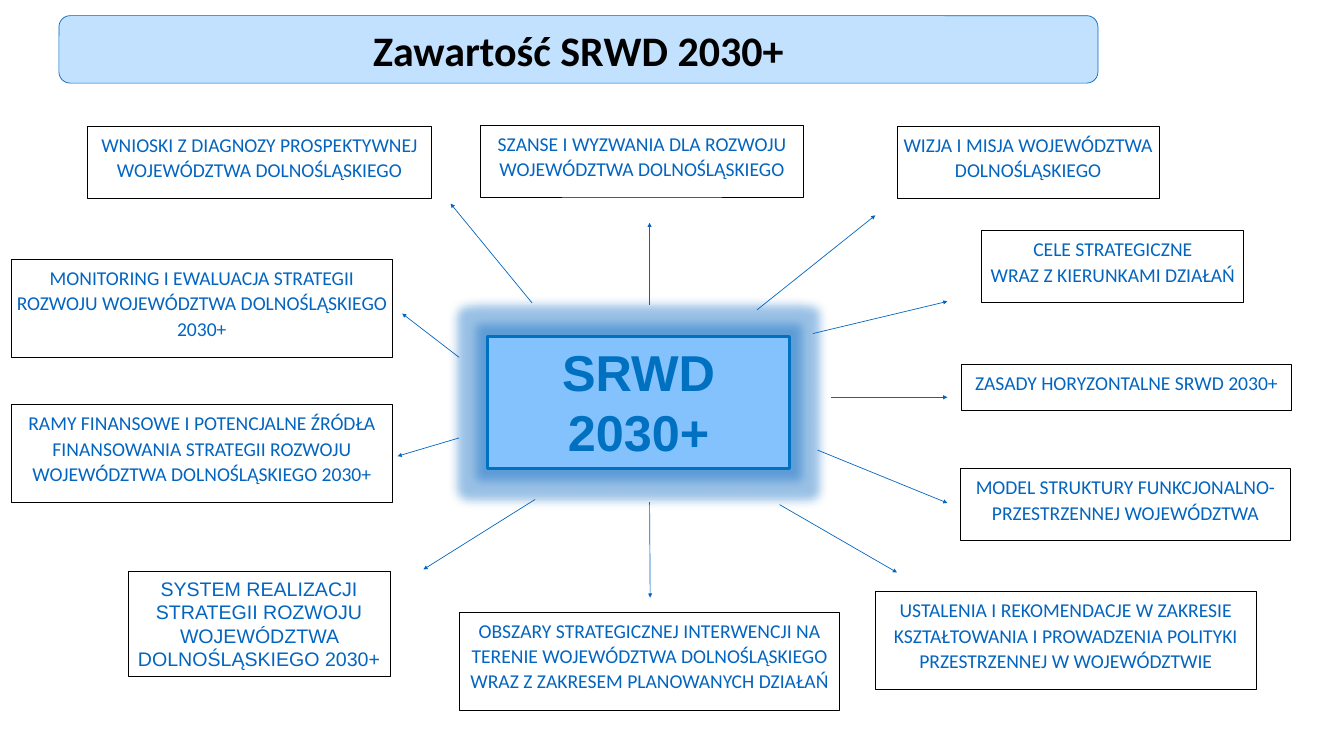
from dataclasses import dataclass

from lxml import etree
from pptx import Presentation
from pptx.dml.color import RGBColor
from pptx.enum.shapes import MSO_CONNECTOR, MSO_SHAPE
from pptx.enum.text import MSO_ANCHOR, MSO_AUTO_SIZE, PP_ALIGN
from pptx.oxml.ns import qn
from pptx.util import Cm, Pt

RECTANGLE = MSO_SHAPE.RECTANGLE
ROUNDED = MSO_SHAPE.ROUNDED_RECTANGLE
STRAIGHT = MSO_CONNECTOR.STRAIGHT
TOP, MIDDLE = MSO_ANCHOR.TOP, MSO_ANCHOR.MIDDLE
CENTER = PP_ALIGN.CENTER
GROW = MSO_AUTO_SIZE.SHAPE_TO_FIT_TEXT


@dataclass(frozen=True)
class Theme:
    blue: str = "0365C0"
    hub_blue: str = "0070C0"
    hub_fill: str = "83C2FD"
    title_fill: str = "C1E1FE"
    black: str = "000000"
    body_font: str = "Calibri"
    hub_font: str = "Arial"
    title_size: int = 60
    hub_size: int = 72
    topic_size: int = 28
    thin: float = 1
    thick: float = 4.5
    inset: float = 0.25


class SlideBuilder:
    def __init__(self, slide, theme):
        self.slide = slide
        self.theme = theme

    def box(self, kind, place, text, font, size, color, bold=False, fill=None,
            border=None, weight=None, anchor=TOP):
        """Draw an outlined shape with centred text; place is in centimetres."""
        theme = self.theme
        shape = self.slide.shapes.add_shape(kind, *map(Cm, place))
        shape.shadow.inherit = False
        if fill:
            shape.fill.solid()
            shape.fill.fore_color.rgb = RGBColor.from_string(fill)
        else:
            shape.fill.background()
        shape.line.color.rgb = RGBColor.from_string(border or theme.black)
        shape.line.width = Pt(weight or theme.thin)

        frame = shape.text_frame
        frame.text = text
        frame.word_wrap = True
        frame.auto_size = GROW
        frame.vertical_anchor = anchor
        frame.margin_left = frame.margin_right = Cm(theme.inset)
        frame.margin_top = frame.margin_bottom = Cm(theme.inset)
        paragraph = frame.paragraphs[0]
        paragraph.alignment = CENTER
        for run in paragraph.runs:
            run.font.name = font
            run.font.size = Pt(size)
            run.font.bold = bold
            run.font.color.rgb = RGBColor.from_string(color)
        return shape

    def title(self, place, text):
        theme = self.theme
        self.box(ROUNDED, place, text, theme.body_font, theme.title_size,
                 theme.black, bold=True, fill=theme.title_fill,
                 border=theme.blue, anchor=MIDDLE)

    def hub(self, place, text):
        theme = self.theme
        shape = self.box(RECTANGLE, place, text, theme.hub_font, theme.hub_size,
                         theme.hub_blue, bold=True, fill=theme.hub_fill,
                         border=theme.hub_blue, weight=theme.thick)
        effects = shape._element.spPr.find(qn("a:effectLst"))
        glow = etree.SubElement(effects, qn("a:glow"), rad=str(Pt(28)))
        color = etree.SubElement(glow, qn("a:srgbClr"), val=theme.blue)
        etree.SubElement(color, qn("a:alpha"), val="40000")

    def topic(self, place, text):
        theme = self.theme
        shape = self.box(RECTANGLE, place, text, theme.body_font,
                         theme.topic_size, theme.blue)
        paragraph = shape.text_frame.paragraphs[0]
        paragraph.line_spacing = 1.07
        paragraph.space_after = Pt(16)

    def plain_topic(self, place, text):
        """Draw a topic in the hub's font with single line spacing."""
        theme = self.theme
        self.box(RECTANGLE, place, text, theme.hub_font, theme.topic_size,
                 theme.blue)

    def arrow(self, start, end):
        line = self.slide.shapes.add_connector(STRAIGHT, *map(Cm, start + end))
        line.line.color.rgb = RGBColor.from_string(self.theme.blue)
        line.line.width = Pt(self.theme.thin)
        etree.SubElement(line.line._get_or_add_ln(), qn("a:tailEnd"),
                         type="triangle")
        etree.SubElement(line._element.spPr, qn("a:effectLst"))


ONE_LINE, TWO_LINES, THREE_LINES = 2.36, 3.63, 4.93
NARROW, MEDIUM, WIDE = 13.21, 16.66, 19.18

TOPICS = [
    ((4.42, 6.35, 17.3, TWO_LINES),
     "WNIOSKI Z DIAGNOZY PROSPEKTYWNEJ WOJEWÓDZTWA DOLNOŚLĄSKIEGO"),
    ((24.21, 6.3, 16.28, TWO_LINES),
     "SZANSE I WYZWANIA DLA ROZWOJU WOJEWÓDZTWA DOLNOŚLĄSKIEGO"),
    ((45.21, 6.35, NARROW, TWO_LINES),
     "WIZJA I MISJA WOJEWÓDZTWA DOLNOŚLĄSKIEGO"),
    ((49.48, 11.63, NARROW, TWO_LINES),
     "CELE STRATEGICZNE\vWRAZ Z KIERUNKAMI DZIAŁAŃ"),
    ((48.44, 18.34, MEDIUM, ONE_LINE),
     "ZASADY HORYZONTALNE SRWD 2030+"),
    ((48.39, 23.62, MEDIUM, TWO_LINES),
     "MODEL STRUKTURY FUNKCJONALNO-PRZESTRZENNEJ WOJEWÓDZTWA"),
    ((44.12, 29.82, WIDE, THREE_LINES),
     "USTALENIA I REKOMENDACJE W ZAKRESIE KSZTAŁTOWANIA I PROWADZENIA "
     "POLITYKI PRZESTRZENNEJ W WOJEWÓDZTWIE"),
    ((23.14, 30.86, WIDE, THREE_LINES),
     "OBSZARY STRATEGICZNEJ INTERWENCJI NA TERENIE WOJEWÓDZTWA "
     "DOLNOŚLĄSKIEGO WRAZ Z ZAKRESEM PLANOWANYCH DZIAŁAŃ"),
    ((0.58, 20.4, WIDE, THREE_LINES),
     "RAMY FINANSOWE I POTENCJALNE ŹRÓDŁA FINANSOWANIA STRATEGII ROZWOJU "
     "WOJEWÓDZTWA DOLNOŚLĄSKIEGO 2030+"),
    ((0.58, 13.08, WIDE, THREE_LINES),
     "MONITORING I EWALUACJA STRATEGII ROZWOJU WOJEWÓDZTWA "
     "DOLNOŚLĄSKIEGO 2030+"),
]

# Clockwise from the top left, each from the hub outwards
ARROWS = [
    ((26.82, 15.27), (22.71, 10.26)),
    ((32.74, 15.37), (32.74, 11.23)),
    ((38.15, 15.62), (44.12, 10.85)),
    ((40.97, 16.81), (47.75, 15.19)),
    ((41.86, 20.02), (47.75, 20.02)),
    ((41.2, 22.68), (47.75, 25.35)),
    ((39.29, 25.43), (45.21, 28.85)),
    ((32.74, 25.3), (32.77, 30.12)),
    ((26.97, 25.17), (21.34, 28.7)),
    ((23.14, 22.07), (20.04, 22.99)),
    ((23.14, 18.01), (20.27, 15.8)),
]


def main():
    deck = Presentation()
    deck.slide_width, deck.slide_height = Cm(67.74), Cm(38.1)
    builder = SlideBuilder(deck.slides.add_slide(deck.slide_layouts[6]), Theme())

    for place, text in TOPICS:
        builder.topic(place, text)
    builder.plain_topic(
        (6.45, 28.8, NARROW, 5.31),
        "SYSTEM REALIZACJI STRATEGII ROZWOJU WOJEWÓDZTWA DOLNOŚLĄSKIEGO 2030+")
    builder.hub((24.59, 16.94, 15.19, 6.68), "SRWD 2030+")
    for start, end in ARROWS:
        builder.arrow(start, end)
    builder.title((2.97, 0.79, 52.37, 3.4), "Zawartość SRWD 2030+")

    deck.save("out.pptx")


if __name__ == "__main__":
    main()
